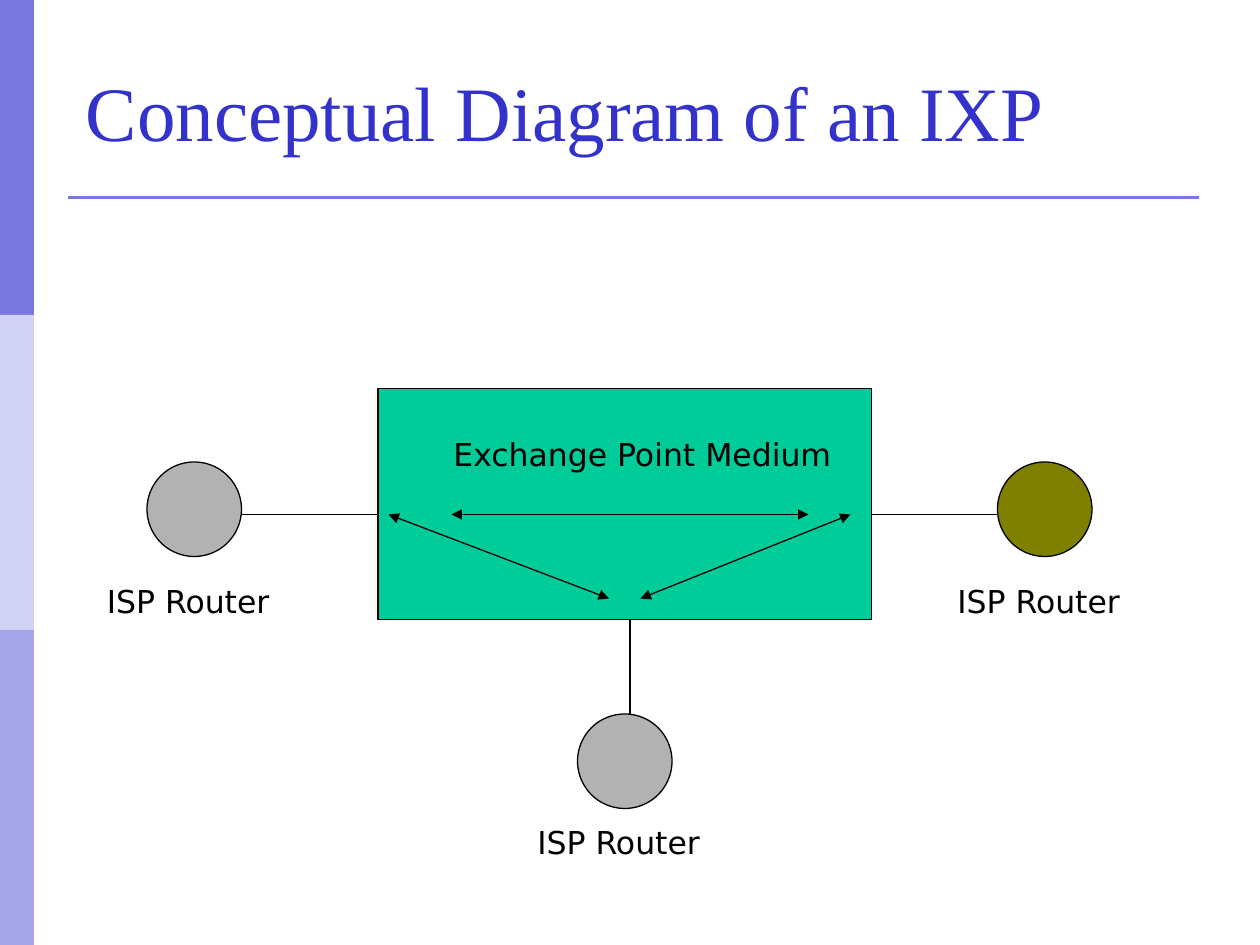
import pptx
import pptx.util
import pptx.dml.color
import pptx.enum.shapes
import pptx.enum.text
import pptx.oxml.ns
import lxml.etree

SHAPES = pptx.enum.shapes.MSO_SHAPE
COLUMNS, ROWS = 120, 90  # grid cells of 1/12 inch


def color(hex_value):
    return pptx.dml.color.RGBColor.from_string(hex_value)


class Diagram:
    """Style and current slide; all lengths are grid columns and rows."""

    ink = "000000"
    thin = 0.75
    body = {"name": "DejaVu Sans", "size": pptx.util.Pt(18)}
    heading = {"name": "Times New Roman", "size": pptx.util.Pt(44)}

    def __init__(self, deck):
        self.slide = deck.slides.add_slide(deck.slide_layouts[6])
        self.column = deck.slide_width / COLUMNS
        self.row = deck.slide_height / ROWS

    def place(self, *lengths):
        units = (self.column, self.row) * 2
        return [round(length * unit) for length, unit in zip(lengths, units)]

    def shape(self, kind, box, fill, outlined=True):
        item = self.slide.shapes.add_shape(kind, *self.place(*box))
        item.shadow.inherit = False
        item.fill.solid()
        item.fill.fore_color.rgb = color(fill)
        if outlined:
            item.line.color.rgb = color(self.ink)
            item.line.width = pptx.util.Pt(self.thin)
        else:
            item.line.fill.background()

    def line(self, ends, stroke=ink, width=thin, arrows=False):
        link = self.slide.shapes.add_connector(
            pptx.enum.shapes.MSO_CONNECTOR.STRAIGHT, *self.place(*ends))
        link.line.color.rgb = color(stroke)
        link.line.width = pptx.util.Pt(width)
        if arrows:
            outline = link.line._get_or_add_ln()
            for end in ("a:headEnd", "a:tailEnd"):
                lxml.etree.SubElement(outline, pptx.oxml.ns.qn(end), type="triangle")
        lxml.etree.SubElement(link._element.spPr, pptx.oxml.ns.qn("a:effectLst"))

    def text(self, words, box, font=body, ink=ink, wrap=False,
             anchor=pptx.enum.text.MSO_ANCHOR.TOP):
        frame = self.slide.shapes.add_textbox(*self.place(*box)).text_frame
        frame.word_wrap = wrap
        frame.vertical_anchor = anchor
        run = frame.paragraphs[0].add_run()
        run.text = words
        for attribute, value in font.items():
            setattr(run.font, attribute, value)
        run.font.color.rgb = color(ink)

    def router(self, left, top, fill, label_drop):
        self.shape(SHAPES.OVAL, (left, top, 9, 9), fill)
        self.text("ISP Router", (left - 5, top + label_drop, 18.84, 4.8))


def main():
    deck = pptx.Presentation()
    deck.slide_width = pptx.util.Inches(10)
    deck.slide_height = pptx.util.Inches(7.5)
    diagram = Diagram(deck)

    # Side band in three equal parts
    for part, fill in enumerate(("7878DE", "D2D2F4", "A5A5E9")):
        height = ROWS / 3
        diagram.shape(SHAPES.RECTANGLE, (0, part * height, 3.24, height), fill,
                      outlined=False)

    # Title and rule
    diagram.line((6.48, 18.84, 114.24, 18.84), "7878DE", 1.5)
    diagram.text("Conceptual Diagram of an IXP", (7, 3, 102, 15),
                 Diagram.heading, "3333CC", wrap=True,
                 anchor=pptx.enum.text.MSO_ANCHOR.MIDDLE)

    # Exchange medium and its links to the routers
    diagram.shape(SHAPES.RECTANGLE, (36, 37, 47, 22), "00CC99")
    for link in ((22, 49, 36, 49), (83, 49, 95, 49), (60, 59, 60, 68)):
        diagram.line(link)

    # Routers with their labels
    for router in ((55, 68, "B2B2B2", 9.84), (14, 44, "B2B2B2", 10.84),
                   (95, 44, "808000", 10.84)):
        diagram.router(*router)

    # Traffic across the medium
    for flow in ((37, 49, 58, 57), (61, 57, 81, 49), (43, 49, 77, 49)):
        diagram.line(flow, arrows=True)
    diagram.text("Exchange Point Medium", (42, 40.8, 38.64, 4.8))

    deck.save("out.pptx")


if __name__ == "__main__":
    main()
